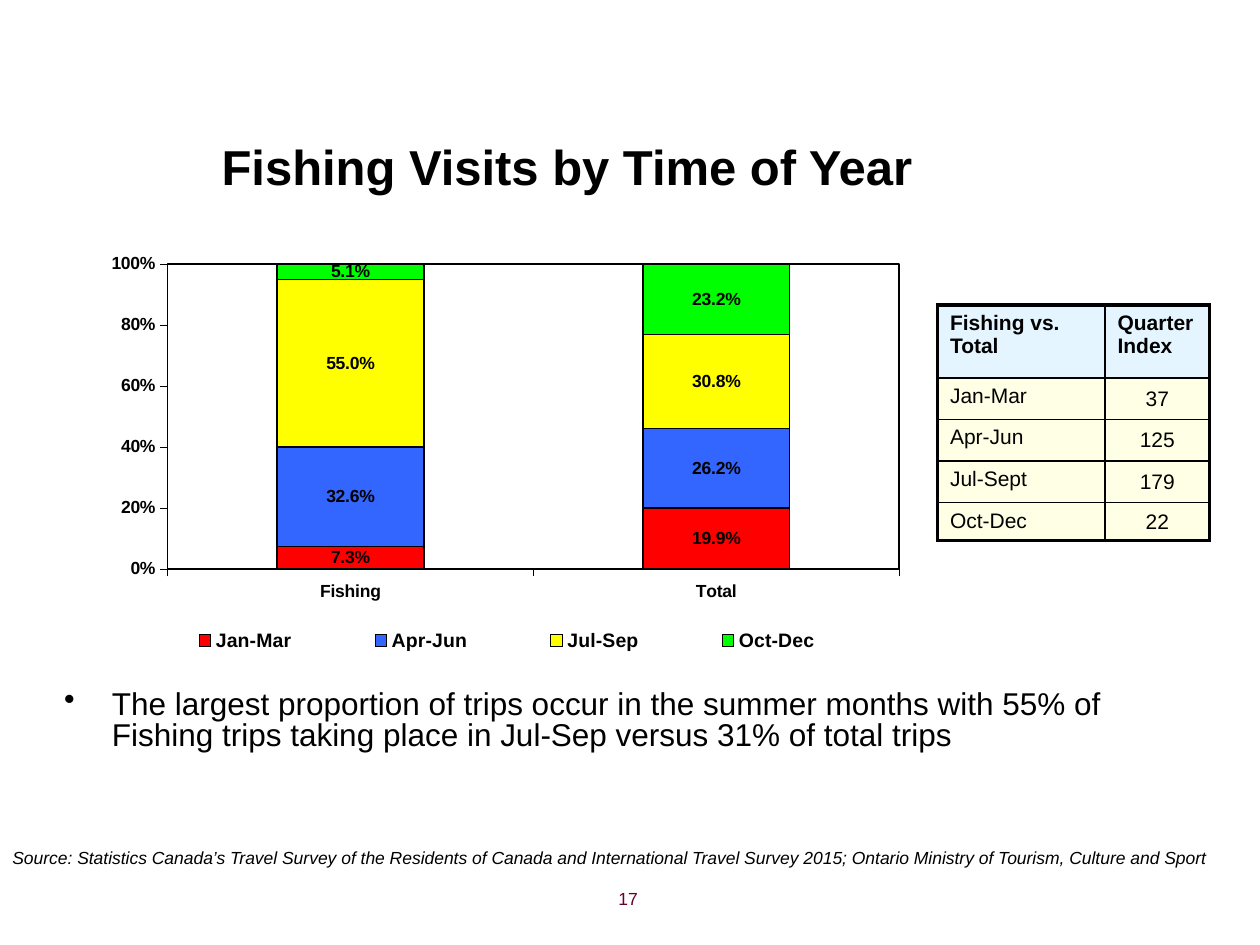
"""Build the slide on fishing visits by time of year."""
from dataclasses import dataclass

from lxml import etree
from pptx import Presentation
from pptx.chart import data
from pptx.dml import color
from pptx.enum import chart as ch, text
from pptx.oxml import ns, parse_xml
from pptx.util import Inches, Pt


@dataclass(frozen=True)
class Theme:
    font: str = "Arial"
    ink: str = "000000"
    number: str = "660033"
    header: str = "CCECFF"
    body: str = "FFFFCC"
    title_size: float = 28
    body_size: float = 18
    table_size: float = 12
    legend_size: float = 11.1
    small_size: float = 10
    thick: float = 2.25
    thin: float = 1


@dataclass(frozen=True)
class Quarter:
    name: str
    shares: tuple[float, float]
    fill: str
    row: str
    index: str
    height: float


THEME = Theme()
QUARTERS = (
    Quarter("Jan-Mar", (0.073, 0.199), "FF0000", "Jan-Mar", "37", 0.33),
    Quarter("Apr-Jun", (0.326, 0.262), "3366FF", "Apr-Jun", "125", 0.33),
    Quarter("Jul-Sep", (0.55, 0.308), "FFFF00", "Jul-Sept", "179", 0.33),
    Quarter("Oct-Dec", (0.051, 0.232), "00FF00", "Oct-Dec", "22", 0.3),
)


def rgb(value: str) -> color.RGBColor:
    return color.RGBColor.from_string(value)


def style(font, size: float, ink: str = THEME.ink, bold: bool = False, italic: bool = False) -> None:
    font.name, font.size = THEME.font, Pt(size)
    font.bold, font.italic = bold, italic
    font.color.rgb = rgb(ink)


def outline(line, width: float) -> None:
    line.color.rgb = rgb(THEME.ink)
    line.width = Pt(width)


def add_text(slide, box: tuple, words: str):
    frame = slide.shapes.add_textbox(*map(Inches, box)).text_frame
    frame.word_wrap = True
    frame.text = words
    return frame.paragraphs[0]


def add_title(slide) -> None:
    title = slide.shapes.title
    title.left, title.top, title.width, title.height = map(Inches, (0, 0.97, 9, 0.69))
    frame = title.text_frame
    frame.text = "Fishing Visits by Time of Year"
    frame.vertical_anchor = text.MSO_ANCHOR.MIDDLE
    frame.paragraphs[0].alignment = text.PP_ALIGN.CENTER
    style(frame.paragraphs[0].runs[0].font, THEME.title_size, bold=True)


def add_finding(slide) -> None:
    finding = add_text(
        slide, (0.41, 5.44, 8.98, 1.5),
        "The largest proportion of trips occur in the summer months with 55% of "
        "Fishing trips taking place in Jul-Sep versus 31% of total trips")
    properties = finding._p.get_or_add_pPr()
    properties.set("marL", str(Inches(0.38)))
    properties.set("indent", str(-Inches(0.38)))
    etree.SubElement(properties, ns.qn("a:buChar")).set("char", "•")
    finding.line_spacing = 0.8
    style(finding.runs[0].font, THEME.body_size)


def place(part, box: tuple, inner: bool = False) -> None:
    for old in part.findall(ns.qn("c:layout")):
        part.remove(old)
    target = '<c:layoutTarget val="inner"/>' if inner else ""
    modes = "".join(f'<c:{side}Mode val="edge"/>' for side in "xy")
    sizes = "".join(f'<c:{key} val="{value}"/>' for key, value in zip("xywh", box))
    layout = parse_xml(
        f'<c:layout {ns.nsdecls("c")}><c:manualLayout>{target}{modes}{sizes}'
        "</c:manualLayout></c:layout>")
    part.insert(0 if inner else 1, layout)


def add_shares(slide) -> None:
    shares = data.CategoryChartData(number_format="0.0%")
    shares.categories = ["Fishing", "Total"]
    for quarter in QUARTERS:
        shares.add_series(quarter.name, quarter.shares)
    chart = slide.shapes.add_chart(
        ch.XL_CHART_TYPE.COLUMN_STACKED_100,
        *map(Inches, (0.64, 1.97, 6.57, 3.8)), shares).chart
    chart.has_title = False
    style(chart.font, THEME.small_size, bold=True)
    plot = chart.plots[0]
    plot.gap_width, plot.overlap = 150, 100
    plot.vary_by_categories = False
    for series, quarter in zip(plot.series, QUARTERS):
        series.format.fill.solid()
        series.format.fill.fore_color.rgb = rgb(quarter.fill)
        outline(series.format.line, THEME.thin)
        labels = series.data_labels
        labels.show_value = True
        labels.number_format, labels.number_format_is_linked = "0.0%", False
        style(labels.font, THEME.small_size, bold=True)
    for axis in (chart.category_axis, chart.value_axis):
        axis.has_major_gridlines = False
        axis.major_tick_mark = ch.XL_TICK_MARK.OUTSIDE
        axis.minor_tick_mark = ch.XL_TICK_MARK.NONE
        outline(axis.format.line, 0.25)
        style(axis.tick_labels.font, THEME.small_size, bold=True)
    chart.value_axis.minimum_scale, chart.value_axis.maximum_scale = 0, 1
    chart.value_axis.major_unit = 0.2
    chart.value_axis.tick_labels.number_format = "0%"
    chart.value_axis.tick_labels.number_format_is_linked = False
    chart.has_legend = True
    chart.legend.position = ch.XL_LEGEND_POSITION.BOTTOM
    chart.legend.include_in_layout = False
    style(chart.legend.font, THEME.legend_size, bold=True)
    place(chart.legend._element, (0.05, 0.78, 0.93, 0.08))
    area = chart._chartSpace.chart.plotArea
    place(area, (0.105, 0.033, 0.884, 0.637), inner=True)
    area.append(parse_xml(
        f'<c:spPr {ns.nsdecls("c", "a")}><a:noFill/><a:ln w="{Pt(THEME.thin)}"><a:solidFill>'
        f'<a:srgbClr val="{THEME.ink}"/></a:solidFill></a:ln></c:spPr>'))


def paint_cell(cell, fill: str, widths: dict[str, float]) -> None:
    properties = cell._tc.get_or_add_tcPr()
    for side, width in widths.items():
        properties.append(parse_xml(
            f'<a:ln{side} {ns.nsdecls("a")} w="{Pt(width)}"><a:solidFill>'
            f'<a:srgbClr val="{THEME.ink}"/></a:solidFill></a:ln{side}>'))
    cell.fill.solid()
    cell.fill.fore_color.rgb = rgb(fill)
    tint = properties.find(f'{ns.qn("a:solidFill")}/{ns.qn("a:srgbClr")}')
    etree.SubElement(tint, ns.qn("a:alpha")).set("val", "50000")


def add_indexes(slide) -> None:
    rows = [("Fishing vs. Total", "Quarter Index")] + [(q.row, q.index) for q in QUARTERS]
    heights = [0.58] + [q.height for q in QUARTERS]
    table = slide.shapes.add_table(
        len(rows), 2, *map(Inches, (7.44, 2.42, 2.17, 1.88))).table
    table.first_row = table.horz_banding = False
    for column, width in zip(table.columns, (1.33, 0.83)):
        column.width = Inches(width)
    for r, (words, height) in enumerate(zip(rows, heights)):
        table.rows[r].height = Inches(height)
        for c, word in enumerate(words):
            cell = table.cell(r, c)
            edges = {"L": c == 0, "R": c == 1, "T": r == 0, "B": r == len(rows) - 1}
            paint_cell(cell, THEME.body if r else THEME.header,
                       {side: THEME.thick if outer else THEME.thin
                        for side, outer in edges.items()})
            cell.text = word
            paragraph = cell.text_frame.paragraphs[0]
            if r and c:
                cell.margin_left = cell.margin_right = cell.margin_top = cell.margin_bottom = 0
                cell.vertical_anchor = text.MSO_ANCHOR.MIDDLE
                paragraph.alignment = text.PP_ALIGN.CENTER
            style(paragraph.runs[0].font, THEME.table_size, bold=r == 0)


def main() -> None:
    deck = Presentation()
    deck.slide_width, deck.slide_height = Inches(10), Inches(7.5)
    slide = deck.slides.add_slide(deck.slide_layouts[5])
    add_title(slide)
    add_finding(slide)
    add_shares(slide)
    add_indexes(slide)
    number = add_text(slide, (2.83, 7, 2.33, 0.35), "17")
    number.alignment = text.PP_ALIGN.RIGHT
    style(number.runs[0].font, THEME.small_size, THEME.number)
    source = add_text(
        slide, (0, 6.67, 9.8, 0.27),
        "Source: Statistics Canada’s Travel Survey of the Residents of Canada and International "
        "Travel Survey 2015; Ontario Ministry of Tourism, Culture and Sport")
    style(source.runs[0].font, THEME.small_size, italic=True)
    deck.save("out.pptx")


if __name__ == "__main__":
    main()
